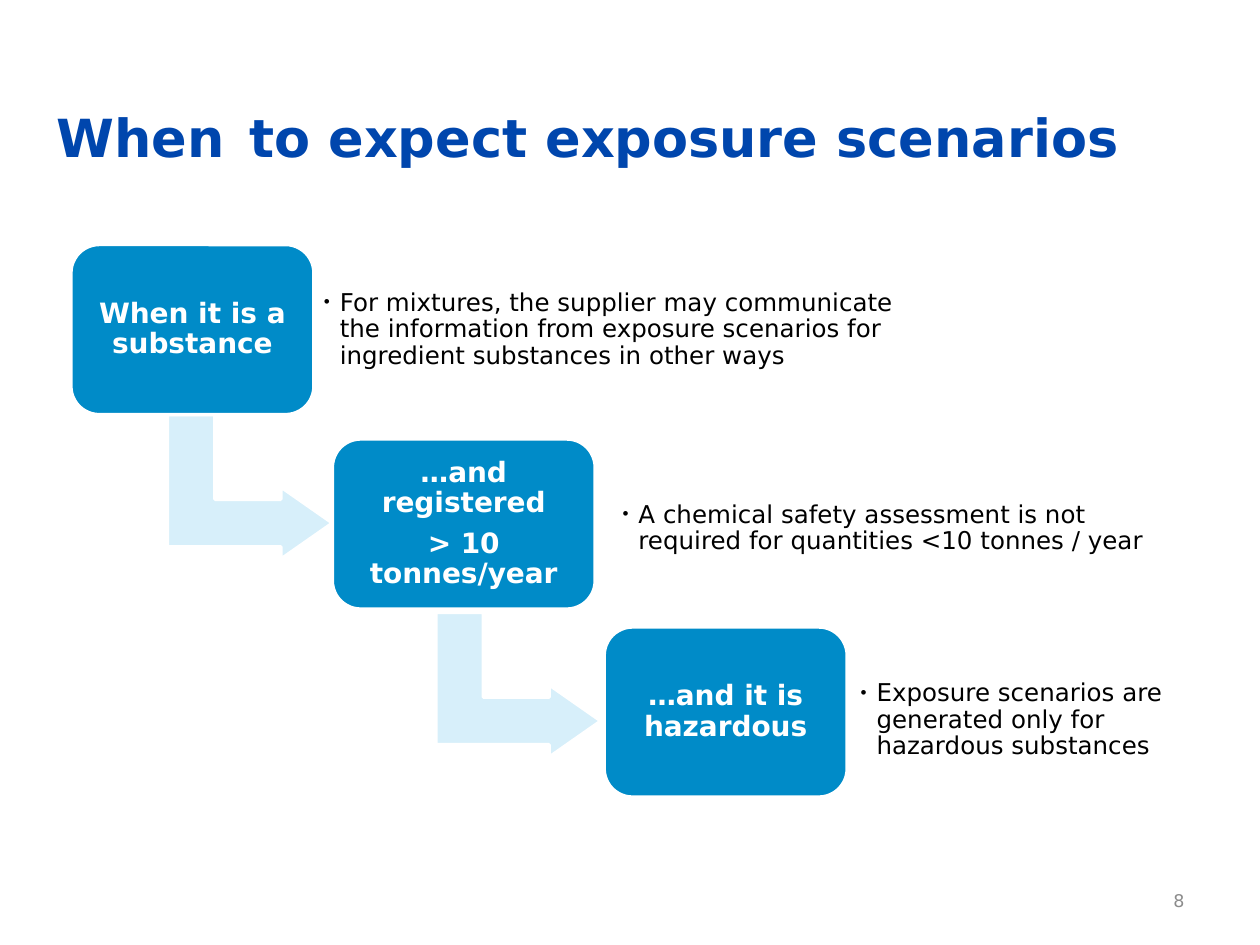
from dataclasses import dataclass

from lxml import etree
from pptx import Presentation
from pptx.dml.color import RGBColor
from pptx.enum.shapes import MSO_SHAPE
from pptx.enum.text import MSO_ANCHOR, MSO_AUTO_SIZE, PP_ALIGN
from pptx.oxml.ns import qn
from pptx.util import Cm, Pt

ROUNDED, BENT_ARROW = MSO_SHAPE.ROUNDED_RECTANGLE, MSO_SHAPE.BENT_UP_ARROW
MIDDLE, NO_AUTOFIT = MSO_ANCHOR.MIDDLE, MSO_AUTO_SIZE.NONE
LEFT, CENTER, RIGHT = PP_ALIGN.LEFT, PP_ALIGN.CENTER, PP_ALIGN.RIGHT
COMPARISON_LAYOUT = 4


@dataclass(frozen=True)
class Theme:
    font: str = "DejaVu Sans"
    title: RGBColor = RGBColor(0x00, 0x46, 0xAD)
    step: RGBColor = RGBColor(0x00, 0x8B, 0xC8)
    arrow: RGBColor = RGBColor(0xD7, 0xEF, 0xFA)
    white: RGBColor = RGBColor(0xFF, 0xFF, 0xFF)
    black: RGBColor = RGBColor(0x00, 0x00, 0x00)
    grey: RGBColor = RGBColor(0x8C, 0x8C, 0x8C)
    title_size: int = 30
    title_gap_size: int = 40
    step_size: int = 16
    note_size: int = 14
    number_size: int = 10


THEME = Theme()

# Boxes are left, top, width, height in centimetres
STEPS = [
    ("When it is a substance", (1.43, 4.93, 4.9, 3.43)),
    ("…and registered\n> 10 tonnes/year", (6.7, 8.85, 5.3, 3.43)),
    ("…and it is hazardous", (12.18, 12.64, 4.9, 3.43)),
]
NOTES = [
    ("For mixtures, the supplier may communicate the information from "
     "exposure scenarios for ingredient substances in other ways",
     (6.38, 5.26, 11.86, 2.77)),
    ("A chemical safety assessment is not required for quantities "
     "<10 tonnes / year", (12.4, 9.27, 11.71, 2.77)),
    ("Exposure scenarios are generated only for hazardous substances",
     (17.2, 12.27, 6.68, 4.5)),
]
ARROWS = [(3.58, 8.15, 2.92, 3.33), (8.99, 12.14, 2.92, 3.33)]
ARROW_ADJUSTMENTS = (0.328, 0.25, 0.358)


def place(shape, box):
    shape.left, shape.top, shape.width, shape.height = map(Cm, box)


def set_up_frame(text_frame, inset):
    text_frame.word_wrap = True
    text_frame.auto_size = NO_AUTOFIT
    text_frame.vertical_anchor = MIDDLE
    text_frame.margin_left = text_frame.margin_right = Cm(inset)
    text_frame.margin_top = text_frame.margin_bottom = Cm(inset)


def format_paragraph(paragraph, size, color, alignment, bold=False,
                     spacing=1.0, after=0):
    paragraph.alignment = alignment
    paragraph.line_spacing = spacing
    paragraph.space_before = Pt(0)
    paragraph.space_after = Pt(after)
    for run in paragraph.runs:
        run.font.name = THEME.font
        run.font.size = Pt(size)
        run.font.bold = bold
        run.font.color.rgb = color


def add_bullet(paragraph):
    properties = paragraph._p.get_or_add_pPr()
    properties.set("marL", str(Cm(0.32)))
    properties.set("indent", str(-Cm(0.32)))
    etree.SubElement(properties, qn("a:buSzPct"), val="70000")
    etree.SubElement(properties, qn("a:buChar"), char="•")


def add_block(slide, preset, box, color):
    shape = slide.shapes.add_shape(preset, *map(Cm, box))
    shape.shadow.inherit = False
    shape.fill.solid()
    shape.fill.fore_color.rgb = color
    shape.line.color.rgb = THEME.white
    shape.line.width = Pt(2)
    return shape


def add_arrow(slide, box):
    shape = add_block(slide, BENT_ARROW, box, THEME.arrow)
    shape.rotation = 90
    for index, value in enumerate(ARROW_ADJUSTMENTS):
        shape.adjustments[index] = value


def add_step(slide, text, box):
    shape = add_block(slide, ROUNDED, box, THEME.step)
    set_up_frame(shape.text_frame, 0.33)
    shape.text_frame.text = text
    for paragraph in shape.text_frame.paragraphs:
        format_paragraph(paragraph, THEME.step_size, THEME.white, CENTER,
                         bold=True, spacing=0.9, after=6)


def fill_note(placeholder, text, box):
    place(placeholder, box)
    set_up_frame(placeholder.text_frame, 0.15)
    placeholder.text_frame.text = text
    paragraph = placeholder.text_frame.paragraphs[0]
    format_paragraph(paragraph, THEME.note_size, THEME.black, LEFT,
                     spacing=0.9, after=2)
    add_bullet(paragraph)


def fill_title(title):
    place(title, (0.89, 1.93, 22.78, 1.37))
    set_up_frame(title.text_frame, 0.25)
    paragraph = title.text_frame.paragraphs[0]
    for text in ("When", " ", "to expect exposure scenarios"):
        paragraph.add_run().text = text
    format_paragraph(paragraph, THEME.title_size, THEME.title, LEFT, bold=True)
    # The gap after the first word is set larger
    paragraph.runs[1].font.size = Pt(THEME.title_gap_size)


def add_slide_number(slide, number):
    box = slide.shapes.add_textbox(Cm(18.21), Cm(17.65), Cm(5.92), Cm(1.02))
    set_up_frame(box.text_frame, 0.25)
    box.text_frame.text = number
    format_paragraph(box.text_frame.paragraphs[0], THEME.number_size,
                     THEME.grey, RIGHT)


def main():
    presentation = Presentation()
    presentation.slide_width, presentation.slide_height = Cm(25.4), Cm(19.05)
    slide = presentation.slides.add_slide(
        presentation.slide_layouts[COMPARISON_LAYOUT])

    # Title and notes use the layout's placeholders; the spare one goes
    fill_title(slide.shapes.title)
    *bodies, spare = list(slide.placeholders)[1:]
    for placeholder, (text, box) in zip(bodies, NOTES):
        fill_note(placeholder, text, box)
    spare.element.getparent().remove(spare.element)

    # Staircase of steps joined by bent arrows
    for box in ARROWS:
        add_arrow(slide, box)
    for text, box in STEPS:
        add_step(slide, text, box)

    add_slide_number(slide, "8")
    presentation.save("out.pptx")


if __name__ == "__main__":
    main()
